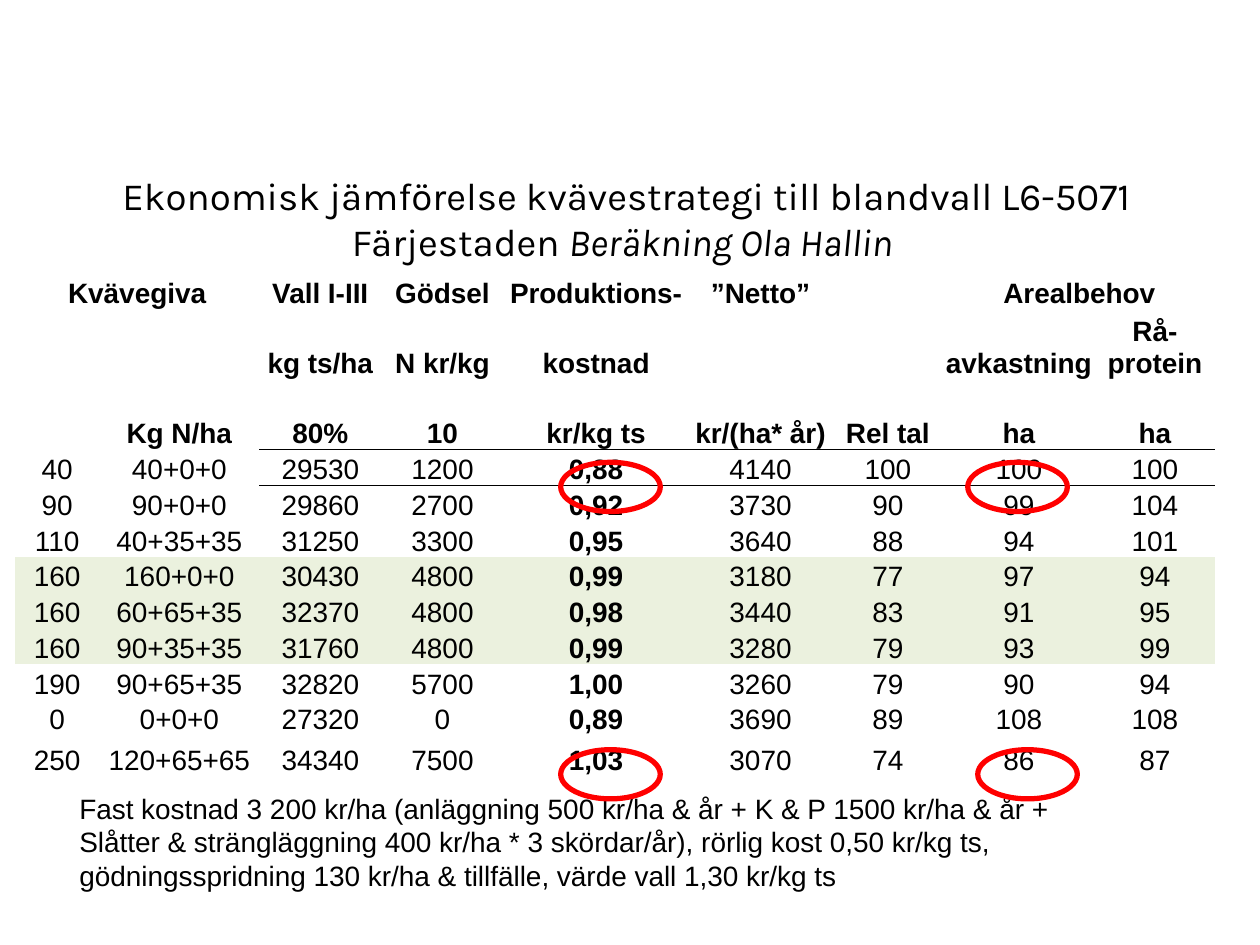
from lxml.etree import SubElement
from pptx import Presentation
from pptx.dml.color import RGBColor
from pptx.enum.shapes import MSO_SHAPE
from pptx.enum.text import MSO_ANCHOR, MSO_AUTO_SIZE, PP_ALIGN
from pptx.oxml.ns import qn
from pptx.util import Pt

THEME = {
    "title_font": "Karla", "title_size": 22,
    "body_font": "Arial", "body_size": 16,
    "text": "000000", "paper": "FFFFFF", "band": "EBF1DE", "mark": "FF0000",
    "table_style": "{2D5ABB26-0587-4C30-8999-92F81FD0307C}",
}

TITLE = [
    ("Ekonomisk jämförelse kvävestrategi till blandvall L6-5071 Färjestaden ", False),
    ("Beräkning Ola Hallin ", True),
]
HEADINGS = [
    ("Kvävegiva", "", "Vall I-III", "Gödsel", "Produktions-", "”Netto”", "", "Arealbehov", ""),
    ("", "", "kg ts/ha", "N kr/kg", "kostnad", "", "", "avkastning", "Rå-protein"),
    ("", "Kg N/ha", "80%", "10", "kr/kg ts", "kr/(ha* år)", "Rel tal", "ha", "ha"),
]
STRATEGIES = [
    ("40", "40+0+0", "29530", "1200", "0,88", "4140", "100", "100", "100"),
    ("90", "90+0+0", "29860", "2700", "0,92", "3730", "90", "99", "104"),
    ("110", "40+35+35", "31250", "3300", "0,95", "3640", "88", "94", "101"),
    ("160", "160+0+0", "30430", "4800", "0,99", "3180", "77", "97", "94"),
    ("160", "60+65+35", "32370", "4800", "0,98", "3440", "83", "91", "95"),
    ("160", "90+35+35", "31760", "4800", "0,99", "3280", "79", "93", "99"),
    ("190", "90+65+35", "32820", "5700", "1,00", "3260", "79", "90", "94"),
    ("0", "0+0+0", "27320", "0", "0,89", "3690", "89", "108", "108"),
    ("250", "120+65+65", "34340", "7500", "1,03", "3070", "74", "86", "87"),
]
NOTE = (
    "Fast kostnad 3 200 kr/ha (anläggning 500 kr/ha & år + K & P 1500 kr/ha & år + "
    "Slåtter & strängläggning 400 kr/ha * 3 skördar/år), rörlig kost 0,50 kr/kg ts, "
    "gödningsspridning 130 kr/ha & tillfälle, värde vall 1,30 kr/kg ts"
)

COLUMN_WIDTHS = [48.2, 91.4, 69.8, 69.8, 105.8, 82.1, 63.4, 86.4, 69.1]
ROW_HEIGHTS = [46, 39.6, 40.4] + [20.45] * 8 + [23]
MERGES = [(0, 0, 1), (0, 7, 8), (1, 0, 1)]
COST_COLUMN = 4
FIRST_RULED_COLUMN = 2
BANDED_DOSE = "160"
MARKS = [(320.4, 264.2), (320.4, 428.4), (553, 264.2), (558.7, 428.4)]
MARK_SIZE = (56.9, 28.1)


def place(shape, left, top, width, height):
    box = {"left": left, "top": top, "width": width, "height": height}
    for name, value in box.items():
        setattr(shape, name, Pt(value))


def style(font, role, **extra):
    values = {"name": THEME[role + "_font"], "size": Pt(THEME[role + "_size"]), **extra}
    for name, value in values.items():
        setattr(font, name, value)
    font.color.rgb = RGBColor.from_string(THEME["text"])


def add_rule(cell, side, color, width):
    properties = cell._tc.get_or_add_tcPr()
    rule = SubElement(properties, qn("a:" + side), w=str(Pt(width)))
    fill = SubElement(rule, qn("a:solidFill"))
    SubElement(fill, qn("a:srgbClr"), val=color)
    properties.insert(0, rule)


def add_title(slide):
    title = slide.shapes.title
    place(title, 38.2, 69.1, 639.4, 85)
    frame = title.text_frame
    settings = {"word_wrap": True, "auto_size": MSO_AUTO_SIZE.NONE,
                "vertical_anchor": MSO_ANCHOR.BOTTOM,
                "margin_left": Pt(3), "margin_right": Pt(3),
                "margin_top": Pt(3), "margin_bottom": Pt(3)}
    for name, value in settings.items():
        setattr(frame, name, value)
    paragraph = frame.paragraphs[0]
    paragraph.alignment = PP_ALIGN.CENTER
    for text, italic in TITLE:
        run = paragraph.add_run()
        run.text = text
        style(run.font, "title", italic=italic)


def fill_cell(cell, text, bold, banded):
    settings = {"vertical_anchor": MSO_ANCHOR.BOTTOM, "margin_left": Pt(0.7),
                "margin_right": Pt(0.7), "margin_top": Pt(0.7), "margin_bottom": Pt(0)}
    for name, value in settings.items():
        setattr(cell, name, value)
    if banded:
        cell.fill.solid()
        cell.fill.fore_color.rgb = RGBColor.from_string(THEME["band"])
    else:
        cell.fill.background()
    paragraph = cell.text_frame.paragraphs[0]
    paragraph.alignment = PP_ALIGN.CENTER
    if text:
        run = paragraph.add_run()
        run.text = text
        style(run.font, "body", bold=bold)


def add_strategy_table(slide):
    rows = HEADINGS + STRATEGIES
    frame = slide.shapes.add_table(
        len(rows), len(COLUMN_WIDTHS), Pt(8.6), Pt(131),
        Pt(sum(COLUMN_WIDTHS)), Pt(sum(ROW_HEIGHTS)))
    table = frame.table
    table.first_row = table.horz_banding = False
    table._tbl.tblPr.find(qn("a:tableStyleId")).text = THEME["table_style"]
    for column, width in zip(table.columns, COLUMN_WIDTHS):
        column.width = Pt(width)
    for row, height in zip(table.rows, ROW_HEIGHTS):
        row.height = Pt(height)
    for r, values in enumerate(rows):
        for c, text in enumerate(values):
            bold = r < len(HEADINGS) or c == COST_COLUMN
            fill_cell(table.cell(r, c), text, bold, values[0] == BANDED_DOSE)
    for r, first, last in MERGES:
        table.cell(r, first).merge(table.cell(r, last))
    for c in range(len(COLUMN_WIDTHS)):
        rule = (THEME["text"], 0.5) if c >= FIRST_RULED_COLUMN else (THEME["paper"], 1)
        add_rule(table.cell(len(HEADINGS) - 1, c), "lnB", *rule)
        add_rule(table.cell(len(HEADINGS), c), "lnT", *rule)


def add_note(slide):
    note = slide.shapes.add_textbox(Pt(38.2), Pt(448.6), Pt(612.7), Pt(65.5))
    note.text_frame.word_wrap = True
    run = note.text_frame.paragraphs[0].add_run()
    run.text = NOTE
    style(run.font, "body")


def add_marks(slide):
    for left, top in MARKS:
        mark = slide.shapes.add_shape(
            MSO_SHAPE.OVAL, Pt(left), Pt(top), *map(Pt, MARK_SIZE))
        mark.shadow.inherit = False
        mark.fill.background()
        mark.line.color.rgb = RGBColor.from_string(THEME["mark"])
        mark.line.width = Pt(3)


def main():
    deck = Presentation()
    deck.slide_width, deck.slide_height = Pt(720), Pt(540)
    slide = deck.slides.add_slide(deck.slide_layouts[5])
    add_title(slide)
    add_strategy_table(slide)
    add_note(slide)
    add_marks(slide)
    deck.save("out.pptx")


if __name__ == "__main__":
    main()
